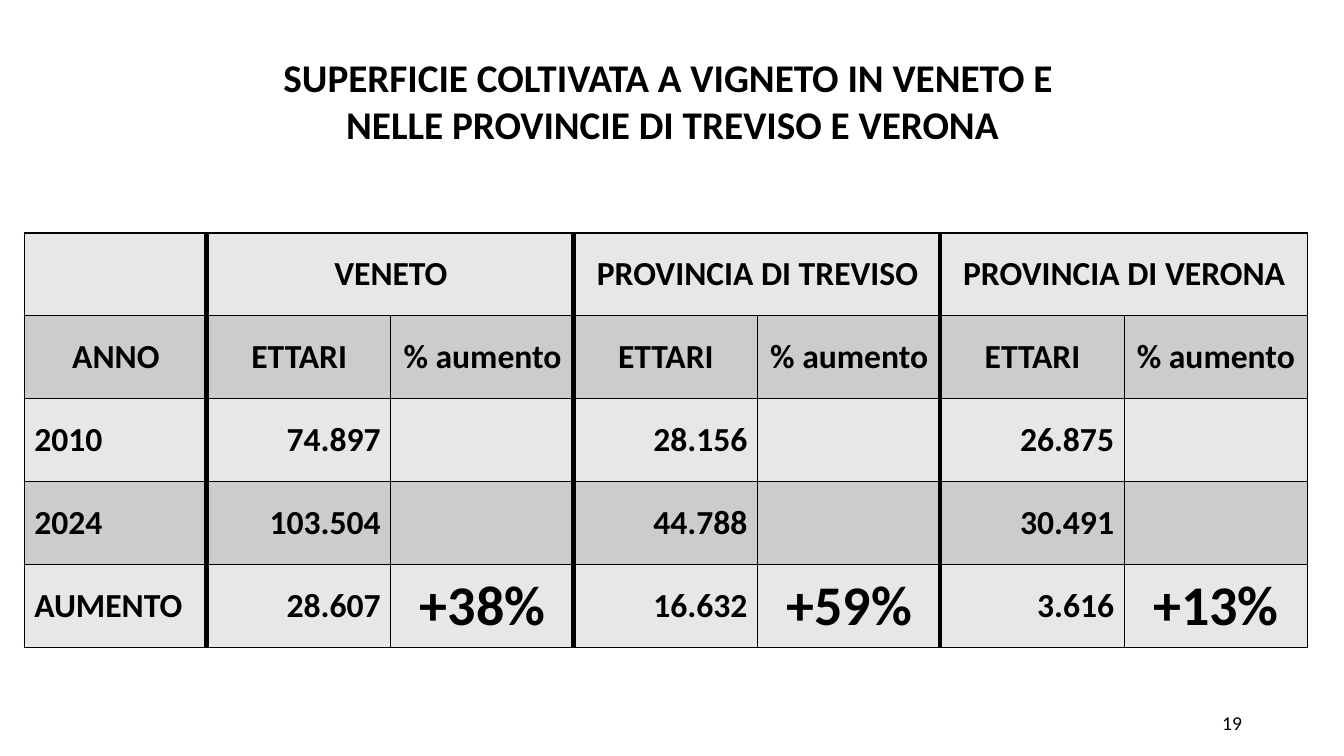
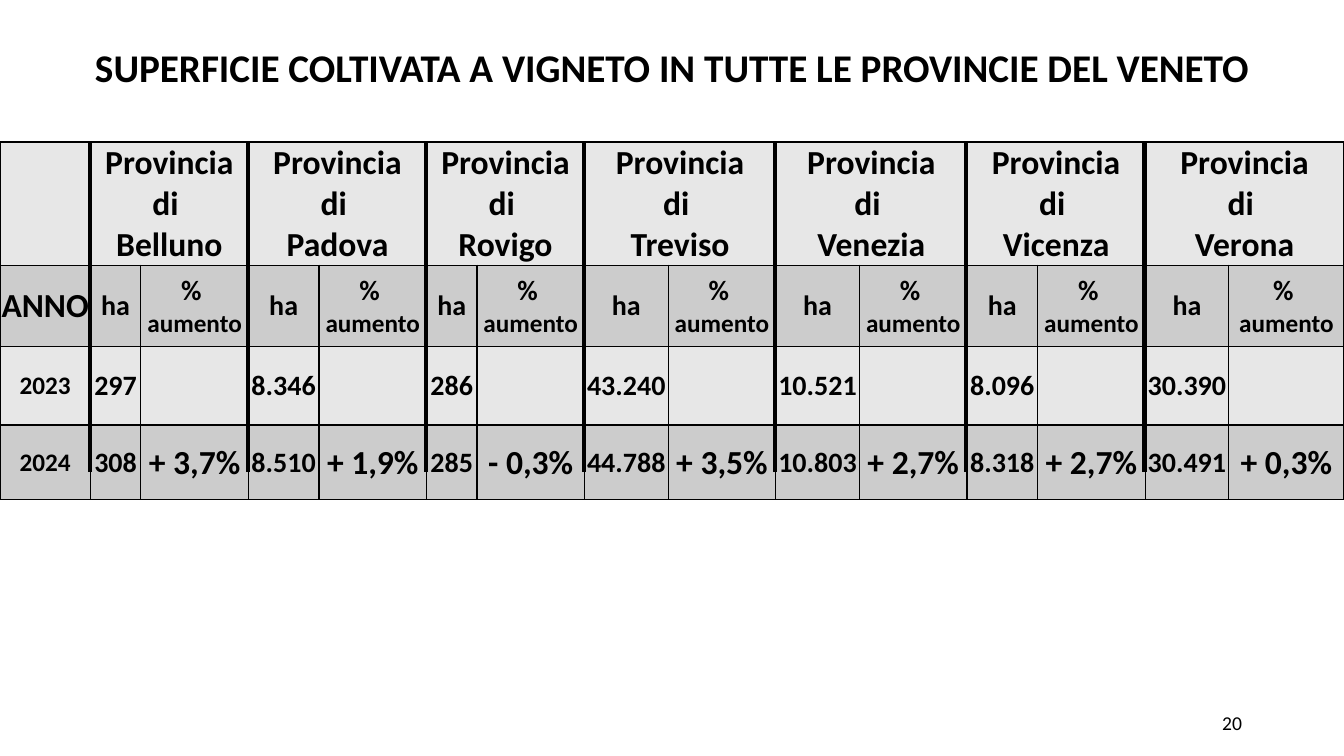
"""Two slides of tables on the vineyard area of Veneto and its provinces."""
import pptx
import pptx.dml.color
import pptx.enum.shapes
import pptx.enum.text
import pptx.oxml
import pptx.oxml.ns
import pptx.util

Cm = pptx.util.Cm
Pt = pptx.util.Pt
Rgb = pptx.dml.color.RGBColor.from_string
Align = pptx.enum.text.PP_ALIGN
Mid = pptx.enum.text.MSO_ANCHOR.MIDDLE
LEFT, MID, RIGHT = Align.LEFT, Align.CENTER, Align.RIGHT

theme = {
    "font": "Calibri", "ink": "000000", "light": "E7E7E7", "dark": "CCCCCC",
    "title": 28, "head": 24, "big": 40, "unit": 20, "small": 18, "page": 14,
    "edge": 12700,
}


def write(frame, lines, align, bold=True):
    """Write one paragraph for each (text, size) pair."""
    for num, (text, size) in enumerate(lines):
        para = frame.add_paragraph() if num else frame.paragraphs[0]
        para.alignment = align
        run = para.add_run()
        run.text = text
        run.font.name = theme["font"]
        run.font.size = Pt(size)
        run.font.bold = bold
        run.font.color.rgb = Rgb(theme["ink"])


def border(cell):
    """Draw a thin line on all four sides of a cell."""
    props = cell._tc.get_or_add_tcPr()
    for side in ("lnL", "lnR", "lnT", "lnB"):
        props.append(pptx.oxml.parse_xml(
            f'<a:{side} {pptx.oxml.ns.nsdecls("a")} w="{theme["edge"]}">'
            f'<a:solidFill><a:srgbClr val="{theme["ink"]}"/></a:solidFill>'
            f'</a:{side}>'))


head, big, unit, small = (theme[key] for key in ("head", "big", "unit", "small"))

areas = [
    ("VENETO", "74.897", "103.504", "28.607", "+38%"),
    ("PROVINCIA DI TREVISO", "28.156", "44.788", "16.632", "+59%"),
    ("PROVINCIA DI VERONA", "26.875", "30.491", "3.616", "+13%"),
]
trend = [
    [None],
    [([("ANNO", head)], MID)],
    [([("2010", head)], LEFT)],
    [([("2024", head)], LEFT)],
    [([("AUMENTO", head)], LEFT)],
]
for name, old, new, gain, rate in areas:
    trend[0] += [([(name, head)], MID), None]
    trend[1] += [([("ETTARI", head)], MID), ([("% aumento", head)], MID)]
    trend[2] += [([(old, head)], RIGHT), None]
    trend[3] += [([(new, head)], RIGHT), None]
    trend[4] += [([(gain, head)], RIGHT), ([(rate, big)], MID)]

towns = [
    ("Belluno", "297", "308", "+ 3,7%", 1.27),
    ("Padova", "8.346", "8.510", "+ 1,9%", 1.78),
    ("Rovigo", "286", "285", "- 0,3%", 1.27),
    ("Treviso", "43.240", "44.788", "+ 3,5%", 2.11),
    ("Venezia", "10.521", "10.803", "+ 2,7%", 2.11),
    ("Vicenza", "8.096", "8.318", "+ 2,7%", 1.78),
    ("Verona", "30.390", "30.491", "+ 0,3%", 2.11),
]
local = [
    [None],
    [([("ANNO", head)], MID)],
    [([("2023", small)], MID)],
    [([("2024", small)], MID)],
]
wides = [2.28]
for name, old, new, rate, wide in towns:
    local[0] += [([("Provincia", head), ("di ", head), (name, head)], MID), None]
    local[1] += [([("ha", unit)], MID), ([("% ", unit), ("aumento", small)], MID)]
    local[2] += [([(old, unit)], MID), None]
    local[3] += [([(new, unit)], MID), ([(rate, head)], MID)]
    wides += [wide, 2.71]
wides[-1] = 2.9

pages = [
    {"page": "19", "box": (3, 1.22, 27.89, 2.64),
     "title": ["SUPERFICIE COLTIVATA A VIGNETO IN VENETO E ",
               "NELLE PROVINCIE DI TREVISO E VERONA"],
     "rows": trend, "at": (0.61, 5.87), "cols": [4.62] * 7,
     "highs": [2.09] * 5, "pad": None, "drop": 10.44, "bar": 3.25},
    {"page": "20", "box": (1.98, 0.97, 29.9, 1.45),
     "title": ["SUPERFICIE COLTIVATA A VIGNETO IN TUTTE LE PROVINCIE DEL VENETO"],
     "rows": local, "at": (0, 3.58), "cols": wides,
     "highs": [3.1, 2.06, 1.97, 1.88], "pad": 0.02, "drop": 8.31, "bar": 3},
]

deck = pptx.Presentation()
deck.slide_width, deck.slide_height = Cm(33.87), Cm(19.05)

for page in pages:
    slide = deck.slides.add_slide(deck.slide_layouts[6])

    foot = slide.shapes.add_textbox(Cm(23.93), Cm(17.7), Cm(7.62), Cm(1.02))
    foot.text_frame.word_wrap = True
    foot.text_frame.vertical_anchor = Mid
    write(foot.text_frame, [(page["page"], theme["page"])], RIGHT, False)

    title = slide.shapes.add_textbox(*map(Cm, page["box"]))
    title.text_frame.word_wrap = True
    write(title.text_frame, [(line, theme["title"]) for line in page["title"]], MID)

    left, top = page["at"]
    cols, highs = page["cols"], page["highs"]
    table = slide.shapes.add_table(
        len(highs), len(cols), Cm(left), Cm(top), Cm(sum(cols)), Cm(sum(highs))).table
    table.first_row = table.horz_banding = False
    for col, wide in zip(table.columns, cols):
        col.width = Cm(wide)
    for row, high in zip(table.rows, highs):
        row.height = Cm(high)

    for down, row in enumerate(page["rows"]):
        for over, entry in enumerate(row):
            cell = table.cell(down, over)
            border(cell)
            cell.fill.solid()
            cell.fill.fore_color.rgb = Rgb(theme["dark" if down % 2 else "light"])
            cell.vertical_anchor = Mid
            if page["pad"] is not None:
                cell.margin_left = cell.margin_right = cell.margin_top = Cm(page["pad"])
                cell.margin_bottom = 0
            if entry:
                write(cell.text_frame, *entry)

    for over in range(1, len(cols), 2):
        table.cell(0, over).merge(table.cell(0, over + 1))
        side = Cm(left + sum(cols[:over]) - 0.02)
        bar = slide.shapes.add_connector(
            pptx.enum.shapes.MSO_CONNECTOR.STRAIGHT,
            side, Cm(top), side, Cm(top + page["drop"]))
        bar.line.color.rgb = Rgb(theme["ink"])
        bar.line.width = Pt(page["bar"])
        bar._element.spPr.append(pptx.oxml.parse_xml(
            f'<a:effectLst {pptx.oxml.ns.nsdecls("a")}/>'))

deck.save("out.pptx")
